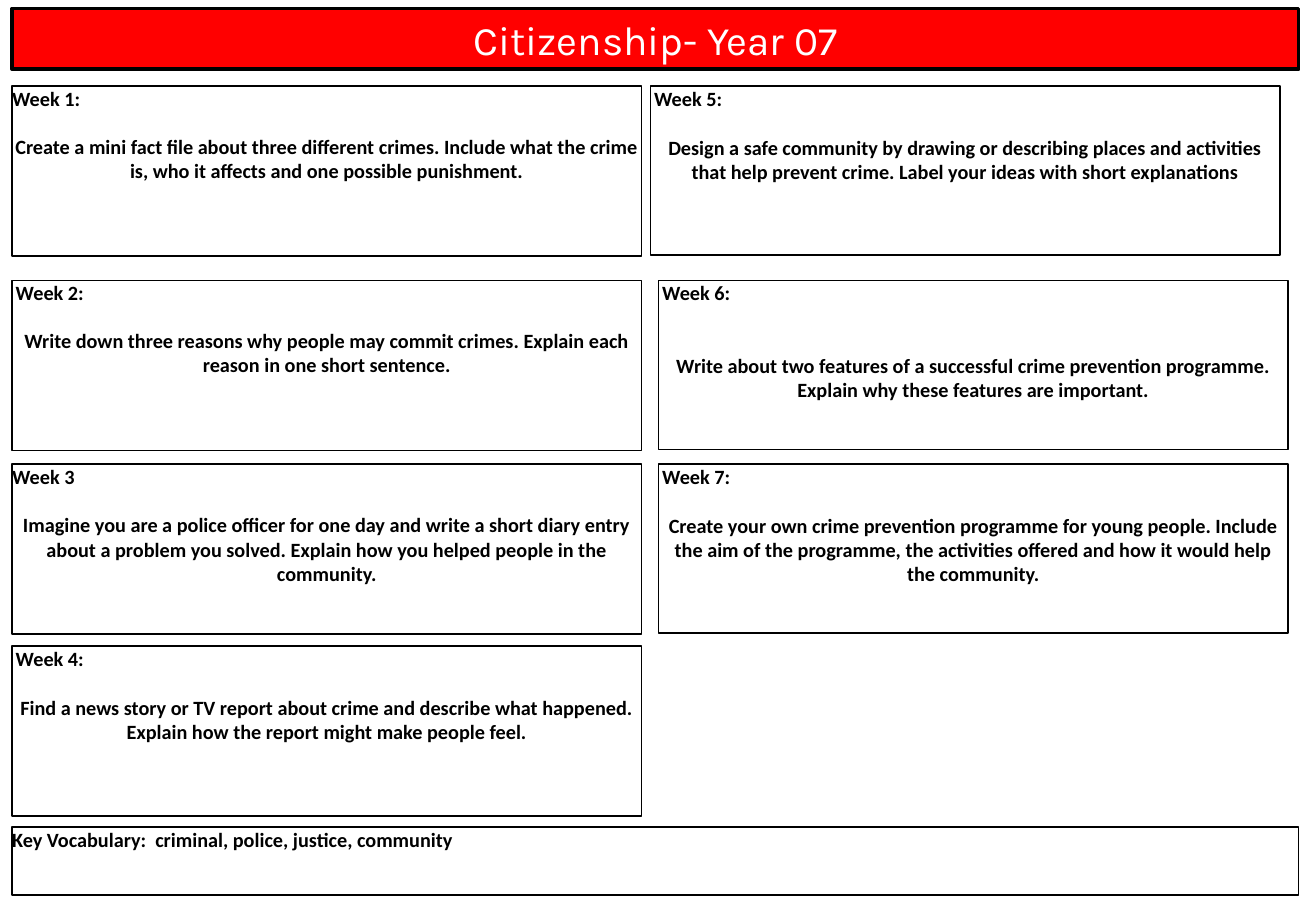
"""Builds the Year 07 Citizenship homework board."""
from pptx import Presentation
from pptx.dml.color import RGBColor as RGB
from pptx.enum.shapes import MSO_SHAPE as SHAPE
from pptx.enum.text import MSO_ANCHOR as ANCHOR, MSO_AUTO_SIZE as FIT, PP_ALIGN as AL
from pptx.util import Inches, Pt

COLORS = {"ink": "000000", "banner": "FF0000", "paper": "FFFFFF"}
FORMATS = {
    "title": {"name": "Karla", "size": Pt(24), "bold": False},
    "text": {"name": "Calibri", "size": Pt(12), "bold": True},
}
LEFT, TOP = 0.1, 0.01
COL, ROW = 10.64 / 80, 0.1
FULL, HALF = 79.6, 38.95
LEFT_COL, RIGHT_COL = 0, 40
WEEKS = [
    (LEFT_COL, 7, 14, 0, 14, "Week 1:",
     "Create a mini fact file about three different crimes. Include what the crime is, "
     "who it affects and one possible punishment."),
    (LEFT_COL, 23, 14, 0.03, 14, "Week 2:",
     "Write down three reasons why people may commit crimes. "
     "Explain each reason in one short sentence."),
    (LEFT_COL, 38.1, 14, 0, 14.5, "Week 3",
     "Imagine you are a police officer for one day and write a short diary entry about "
     "a problem you solved. Explain how you helped people in the community."),
    (LEFT_COL, 53.1, 14, 0.03, 14.5, "Week 4:",
     "Find a news story or TV report about crime and describe what happened. "
     "Explain how the report might make people feel."),
    (RIGHT_COL - 0.5, 7, 13.9, 0.03, 14.5, "Week 5:",
     "Design a safe community by drawing or describing places and activities that help "
     "prevent crime. Label your ideas with short explanations"),
    (RIGHT_COL, 23, 13.9, 0.03, 28.5, "Week 6:",
     "Write about two features of a successful crime prevention programme. "
     "Explain why these features are important."),
    (RIGHT_COL, 38.1, 13.9, 0.03, 14.5, "Week 7:",
     "Create your own crime prevention programme for young people. Include the aim of the "
     "programme, the activities offered and how it would help the community."),
]


class Board:
    """Holds the style and the current slide."""

    def __init__(self, prs):
        """Adds a title-only slide."""
        self.s = prs.slides.add_slide(prs.slide_layouts[5])

    def place(self, col, row, cols, rows):
        """Turns grid units into lengths."""
        return [Inches(v) for v in
                (LEFT + col * COL, TOP + row * ROW, cols * COL, rows * ROW)]

    def outline(self, sp, width):
        """Draws the border of a box."""
        sp.line.color.rgb = RGB.from_string(COLORS["ink"])
        sp.line.width = Pt(width)

    def text(self, p, words, style, color, align, before=0, indent=0):
        """Fills one paragraph."""
        p.alignment, p.space_before = align, Pt(before)
        if indent:
            p._p.get_or_add_pPr().set("marL", str(Inches(indent)))
        r = p.add_run()
        r.text = words
        for key, value in FORMATS[style].items():
            setattr(r.font, key, value)
        r.font.color.rgb = RGB.from_string(COLORS[color])

    def title(self, words):
        """Turns the title placeholder into the banner."""
        sp = self.s.shapes.title
        sp.left, sp.top, sp.width, sp.height = self.place(LEFT_COL, 0.6, FULL, 5)
        sp.fill.solid()
        sp.fill.fore_color.rgb = RGB.from_string(COLORS["banner"])
        self.outline(sp, 2.25)
        tf = sp.text_frame
        tf.auto_size, tf.vertical_anchor = FIT.NONE, ANCHOR.MIDDLE
        self.text(tf.paragraphs[0], words, "title", "paper", AL.CENTER)

    def box(self, col, row, cols, rows, heading, indent=0):
        """Adds an outlined box with a heading and returns its text frame."""
        sp = self.s.shapes.add_shape(SHAPE.RECTANGLE, *self.place(col, row, cols, rows))
        sp.shadow.inherit = False
        sp.fill.background()
        self.outline(sp, 1)
        tf = sp.text_frame
        tf.word_wrap, tf.vertical_anchor = True, ANCHOR.TOP
        for side in ("left", "top", "right", "bottom"):
            setattr(tf, f"margin_{side}", 0)
        self.text(tf.paragraphs[0], heading, "text", "ink", AL.LEFT, indent=indent)
        return tf

    def week(self, col, row, rows, indent, gap, heading, task):
        """Adds a week's box with its task."""
        tf = self.box(col, row, HALF, rows, heading, indent)
        self.text(tf.add_paragraph(), task, "text", "ink", AL.CENTER, gap)


def main():
    """Builds and saves the slide."""
    prs = Presentation()
    prs.slide_width, prs.slide_height = Inches(10.83), Inches(7.5)
    board = Board(prs)
    board.title("Citizenship- Year 07")
    for week in WEEKS:
        board.week(*week)
    board.box(LEFT_COL, 68, FULL, 5.6,
              "Key Vocabulary:  criminal, police, justice, community")
    prs.save("out.pptx")


if __name__ == "__main__":
    main()
